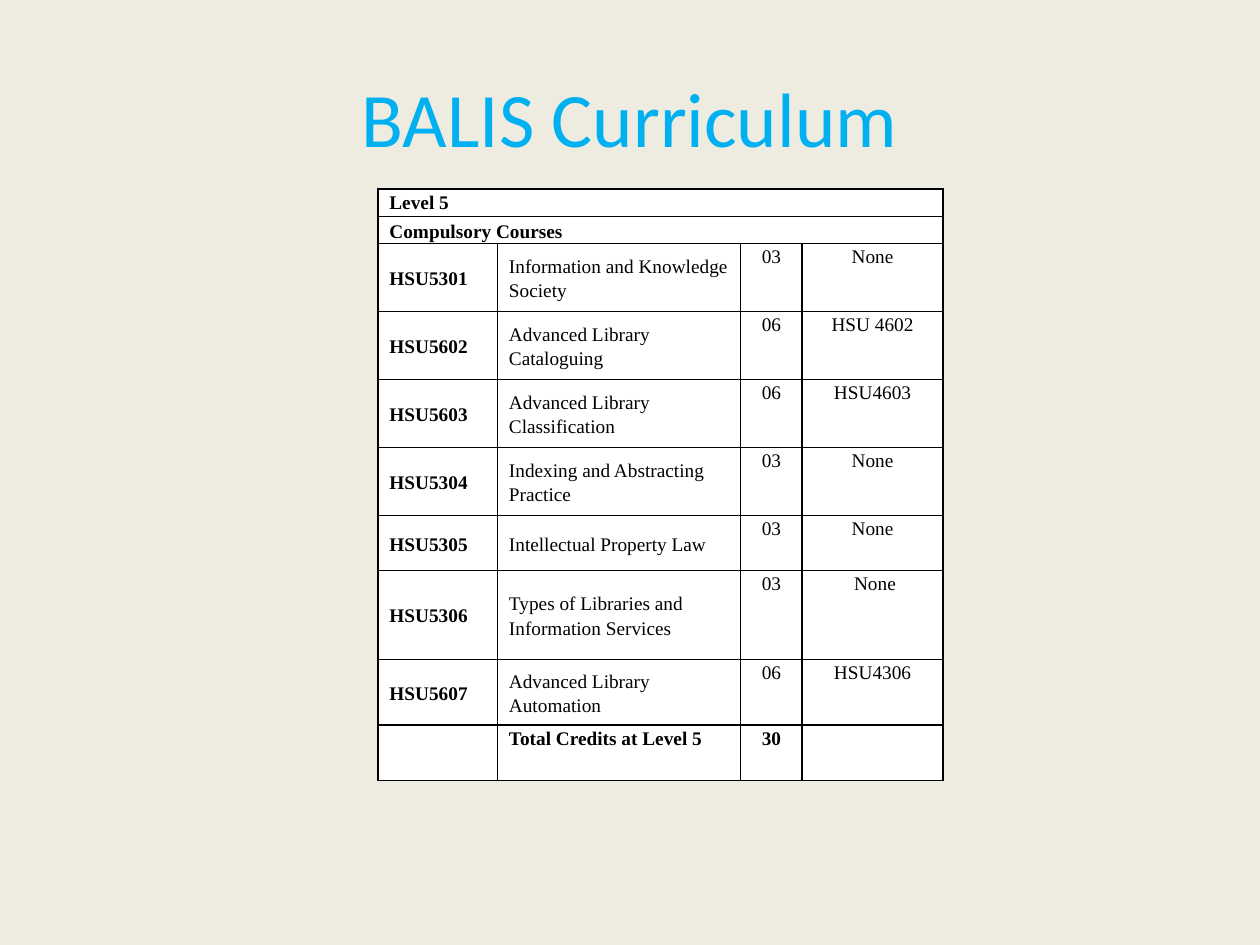
from lxml.etree import SubElement
from pptx import Presentation
from pptx.dml.color import RGBColor
from pptx.enum.text import MSO_ANCHOR as Anchor, PP_ALIGN as Align
from pptx.oxml.ns import qn
from pptx.util import Cm, Pt

BACKGROUND = RGBColor(0xEE, 0xEC, 0xE1)
SKY_BLUE = RGBColor(0x00, 0xB0, 0xF0)
BLACK = RGBColor(0, 0, 0)
WHITE = RGBColor(0xFF, 0xFF, 0xFF)

COLUMN_WIDTHS = [2.41, 4.9, 1.24, 2.84]
ROWS = [  # height in cm, then the cell texts
    (0.55, "Level 5"),
    (0.55, "Compulsory Courses"),
    (1.37, "HSU5301", "Information and Knowledge Society", "03", "None"),
    (1.37, "HSU5602", "Advanced Library Cataloguing", "06", "HSU 4602"),
    (1.37, "HSU5603", "Advanced Library Classification", "06", "HSU4603"),
    (1.37, "HSU5304", "Indexing and Abstracting Practice", "03", "None"),
    (1.11, "HSU5305", "Intellectual Property Law", "03", "None"),
    (1.79, "HSU5306", "Types of Libraries and Information Services", "03", " None"),
    (1.33, "HSU5607", "Advanced Library Automation", "06", "HSU4306"),
    (1.11, "", "Total Credits at Level 5", "30", ""),
]
HEADING_ROWS = 2
TOTAL_ROW = len(ROWS) - 1
CELL_FORMAT = {"margin_left": Cm(0.23), "margin_right": Cm(0.23),
               "margin_top": 0, "margin_bottom": 0}


def write(paragraph, text, font_format, color):
    run = paragraph.add_run()
    run.text = text
    for name, value in font_format.items():
        setattr(run.font, name, value)
    run.font.color.rgb = color


def add_borders(cell):
    """Draw a 1 pt black line on each side; call before filling the cell."""
    properties = cell._tc.get_or_add_tcPr()
    for side in ("a:lnL", "a:lnR", "a:lnT", "a:lnB"):
        line = SubElement(properties, qn(side), w=str(Pt(1)))
        fill = SubElement(line, qn("a:solidFill"))
        SubElement(fill, qn("a:srgbClr"), val=str(BLACK))


presentation = Presentation()
presentation.slide_width = Cm(25.4)
presentation.slide_height = Cm(19.05)
slide = presentation.slides.add_slide(presentation.slide_layouts[6])
slide.background.fill.solid()
slide.background.fill.fore_color.rgb = BACKGROUND

title = slide.shapes.add_textbox(Cm(1.27), Cm(0.76), Cm(22.86), Cm(3.18))
title.text_frame.word_wrap = True
title.text_frame.vertical_anchor = Anchor.MIDDLE
title_paragraph = title.text_frame.paragraphs[0]
title_paragraph.alignment = Align.CENTER
write(title_paragraph, "BALIS Curriculum", {"name": "Calibri", "size": Pt(44)}, SKY_BLUE)

table = slide.shapes.add_table(
    len(ROWS), len(COLUMN_WIDTHS), Cm(7.62), Cm(3.81),
    Cm(sum(COLUMN_WIDTHS)), Cm(sum(row[0] for row in ROWS))).table
for column, width in zip(table.columns, COLUMN_WIDTHS):
    column.width = Cm(width)

for row_index, (height, *texts) in enumerate(ROWS):
    table.rows[row_index].height = Cm(height)
    if row_index < HEADING_ROWS:
        table.cell(row_index, 0).merge(table.cell(row_index, len(COLUMN_WIDTHS) - 1))
    for cell in table.rows[row_index].cells:
        add_borders(cell)
        cell.fill.solid()
        cell.fill.fore_color.rgb = WHITE
        for name, value in CELL_FORMAT.items():
            setattr(cell, name, value)

    for column_index, text in enumerate(texts):
        if not text:
            continue
        cell = table.cell(row_index, column_index)
        is_middle = column_index < 2 and row_index not in (0, TOTAL_ROW)
        cell.vertical_anchor = Anchor.MIDDLE if is_middle else Anchor.TOP
        paragraph = cell.text_frame.paragraphs[0]
        paragraph.line_spacing = 1.15
        paragraph.alignment = Align.LEFT if column_index < 2 else Align.CENTER
        is_bold = column_index == 0 or row_index == TOTAL_ROW
        write(paragraph, text,
              {"name": "Times New Roman", "size": Pt(11), "bold": is_bold}, BLACK)

presentation.save("out.pptx")
